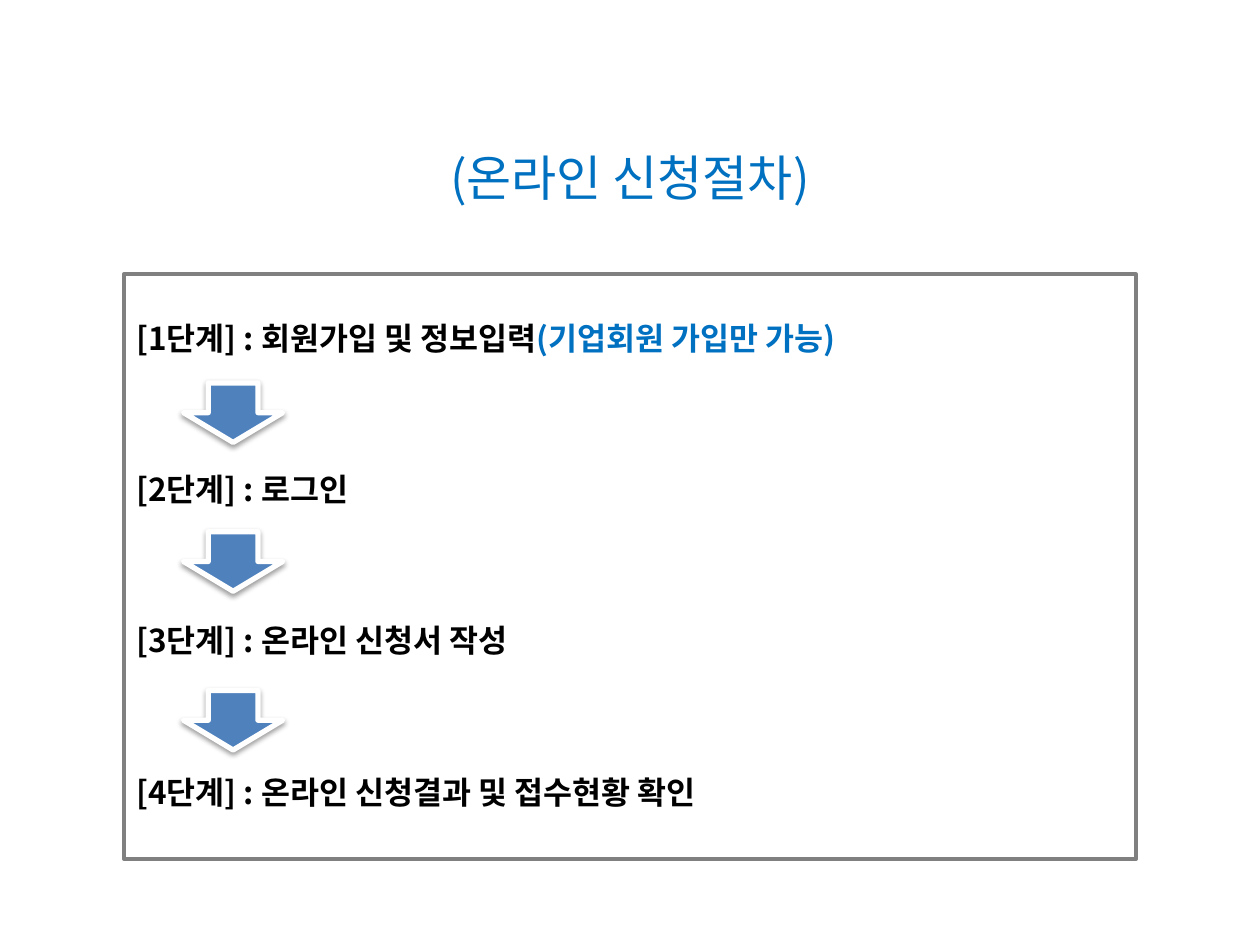
from lxml import etree
from pptx import Presentation
from pptx.dml.color import RGBColor
from pptx.enum.shapes import MSO_SHAPE
from pptx.enum.text import MSO_ANCHOR, PP_ALIGN
from pptx.oxml import parse_xml
from pptx.oxml.ns import nsdecls, qn
from pptx.util import Cm, Pt

RECT, DOWN_ARROW = MSO_SHAPE.RECTANGLE, MSO_SHAPE.DOWN_ARROW
TOP, MIDDLE = MSO_ANCHOR.TOP, MSO_ANCHOR.MIDDLE
LEFT, CENTER = PP_ALIGN.LEFT, PP_ALIGN.CENTER
FONT = "Noto Sans CJK KR"
COLORS = {"text": "000000", "accent": "0070C0", "frame": "808080",
          "arrow": "4F81BD", "outline": "FFFFFF", "shadow": "000000"}
STEPS = [
    [("[1단계] : 회원가입 및 정보입력", "text"), ("(기업회원 가입만 가능)", "accent")],
    [("[2단계] : 로그인", "text")],
    [("[3단계] : 온라인 신청서 작성", "text")],
    [("[4단계] : 온라인 신청결과 및 접수현황 확인", "text")],
]
ARROW_TOPS = [7.72, 10.72, 13.92]


def rgb(name):
    return RGBColor.from_string(COLORS[name])


def add_run(p, text, size, color, bold=False):
    """Add a run whose Latin and East Asian fonts are both FONT."""
    r = p.add_run()
    r.text = text
    r.font.size, r.font.bold, r.font.name = Pt(size), bold, FONT
    r.font.color.rgb = rgb(color)
    ea = etree.Element(qn("a:ea"), typeface=FONT)
    r.font._element.find(qn("a:latin")).addnext(ea)


prs = Presentation()
prs.slide_width, prs.slide_height = Cm(25.4), Cm(19.05)
s = prs.slides.add_slide(prs.slide_layouts[6])

# Frame with the four steps
sp = s.shapes.add_shape(RECT, Cm(2.5), Cm(5.53), Cm(20.4), Cm(11.79))
sp.shadow.inherit = False
sp.fill.background()
sp.line.color.rgb = rgb("frame")
sp.line.width = Pt(2.25)
tf = sp.text_frame
tf.word_wrap = True
tf.vertical_anchor = TOP
tf.margin_top = Cm(0.9)
for i, step in enumerate(STEPS):
    p = tf.add_paragraph() if i else tf.paragraphs[0]
    p.alignment = LEFT
    if i:
        p.space_before = Pt(64.8)
    for text, color in step:
        add_run(p, text, 18, color, bold=True)

# Title
sp = s.shapes.add_textbox(Cm(6.35), Cm(2.39), Cm(12.7), Cm(1.78))
tf = sp.text_frame
tf.word_wrap = True
tf.vertical_anchor = MIDDLE
p = tf.paragraphs[0]
p.alignment = CENTER
p.line_spacing = 1.5
add_run(p, "(온라인 신청절차)", 28, "accent")

# Arrows between the steps
for top in ARROW_TOPS:
    sp = s.shapes.add_shape(DOWN_ARROW, Cm(3.7), Cm(top), Cm(2), Cm(1.2))
    sp.fill.solid()
    sp.fill.fore_color.rgb = rgb("arrow")
    sp.line.color.rgb = rgb("outline")
    sp.line.width = Pt(3)
    sp._element.spPr.append(parse_xml(
        f'<a:effectLst {nsdecls("a")}>'
        f'<a:outerShdw blurRad="{Pt(3.1)}" dist="{Pt(1.6)}" dir="5400000" rotWithShape="0">'
        f'<a:srgbClr val="{COLORS["shadow"]}"><a:alpha val="38000"/></a:srgbClr>'
        '</a:outerShdw></a:effectLst>'))

prs.save("out.pptx")
